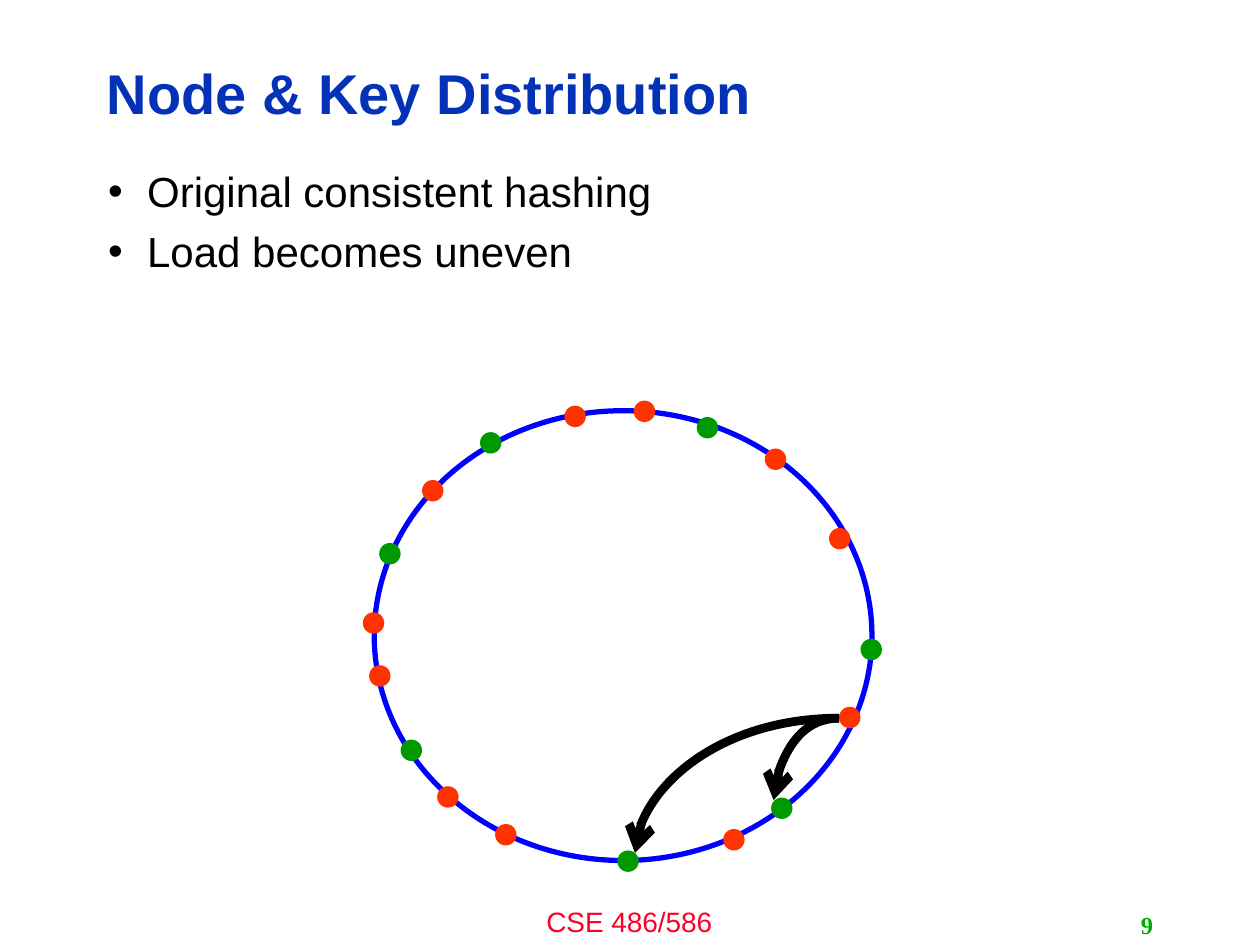
from lxml import etree
from pptx import Presentation
from pptx import util as u
from pptx.dml.color import RGBColor
from pptx.enum import shapes, text
from pptx.oxml.ns import qn

COLS, ROWS = 100, 75
RED, GREEN = "FF3300", "009900"
KEYS = [(61.55, 36.45), (58.25, 66.65), (40.15, 66.25), (66.65, 42.75),
        (67.45, 56.95), (51.15, 32.65), (45.65, 33.05), (34.35, 38.95),
        (29.65, 49.45), (30.15, 53.65), (35.55, 63.25)]
NODES = [(69.15, 51.55), (30.95, 43.95), (62.05, 64.15), (38.95, 35.15),
         (32.65, 59.55), (49.85, 68.35), (56.15, 33.95)]


def hue(code):
    return RGBColor.from_string(code)


def write(par, words, size=24, font="Arial", ink="000000", bold=False,
          align=text.PP_ALIGN.LEFT, lead=1.0, gap=0):
    par.alignment, par.line_spacing = align, lead
    par.space_before = u.Pt(gap)
    run = par.add_run()
    run.text = words
    run.font.size, run.font.name = u.Pt(size), font
    run.font.bold = bold
    run.font.color.rgb = hue(ink)


def bullet(par, dent):
    props = par._p.get_or_add_pPr()
    props.set("marL", str(dent))
    props.set("indent", str(-dent))
    etree.SubElement(props, qn("a:buFont"), typeface="Arial")
    etree.SubElement(props, qn("a:buChar"), char="•")


class Page:
    def __init__(self, deck):
        self.slide = deck.slides.add_slide(deck.slide_layouts[6])
        self.dx = deck.slide_width / COLS
        self.dy = deck.slide_height / ROWS

    def spot(self, col, row):
        return round(col * self.dx), round(row * self.dy)

    def words(self, col, row, wide, high, lines, mid=False, dots=False, **style):
        box = self.slide.shapes.add_textbox(*self.spot(col, row), *self.spot(wide, high))
        frame = box.text_frame
        frame.word_wrap = True
        frame.vertical_anchor = text.MSO_ANCHOR.MIDDLE if mid else text.MSO_ANCHOR.TOP
        for i, line in enumerate(lines):
            par = frame.add_paragraph() if i else frame.paragraphs[0]
            write(par, line, **style)
            if dots:
                bullet(par, round(3.1 * self.dx))

    def oval(self, col, row, wide, high, fill=None, line=None, weight=3):
        form = self.slide.shapes.add_shape(
            shapes.MSO_SHAPE.OVAL, *self.spot(col, row), *self.spot(wide, high))
        form.shadow.inherit = False
        if fill:
            form.fill.solid()
            form.fill.fore_color.rgb = hue(fill)
        else:
            form.fill.background()
        if line:
            form.line.color.rgb = hue(line)
            form.line.width = u.Pt(weight)
        else:
            form.line.fill.background()

    def dot(self, col, row, fill, size=1.7):
        self.oval(col - size / 2, row - size / 2, size, size, fill)

    def arc(self, start, end, ink="000000", weight=5):
        link = self.slide.shapes.add_connector(
            shapes.MSO_CONNECTOR.CURVE, *self.spot(*start), *self.spot(*end))
        link.line.color.rgb = hue(ink)
        link.line.width = u.Pt(weight)
        props = link._element.spPr
        props.find(qn("a:prstGeom")).set("prst", "curvedConnector2")
        etree.SubElement(props.find(qn("a:ln")), qn("a:tailEnd"), type="arrow")
        etree.SubElement(props, qn("a:effectLst"))


def main():
    deck = Presentation()
    deck.slide_width, deck.slide_height = u.Inches(10), u.Inches(7.5)
    page = Page(deck)
    page.words(33.3, 71.3, 33.3, 3.7, ["CSE 486/586"], size=16, ink="FC0128",
               align=text.PP_ALIGN.CENTER)
    page.words(7.5, 3.6, 79.8, 8.1, ["Node & Key Distribution"], mid=True,
               size=32, ink="0332B7", bold=True, lead=0.9)
    page.words(7.6, 13.1, 84, 53.9, ["Original consistent hashing", "Load becomes uneven"],
               dots=True, lead=0.9, gap=8.3)
    page.words(71.7, 71.8, 20.8, 3.2, ["9"], mid=True, size=14, ink="00AE00",
               font="Times New Roman", bold=True, align=text.PP_ALIGN.RIGHT)
    page.oval(29.7, 32.6, 39.5, 35.7, line="0000FF")
    for spots, fill in ((KEYS, RED), (NODES, GREEN)):
        for col, row in spots:
            page.dot(col, row, fill)
    for end in ((61.4, 63.5), (50.4, 67.7)):
        page.arc((66.6, 57), end)
    deck.save("out.pptx")


if __name__ == "__main__":
    main()
